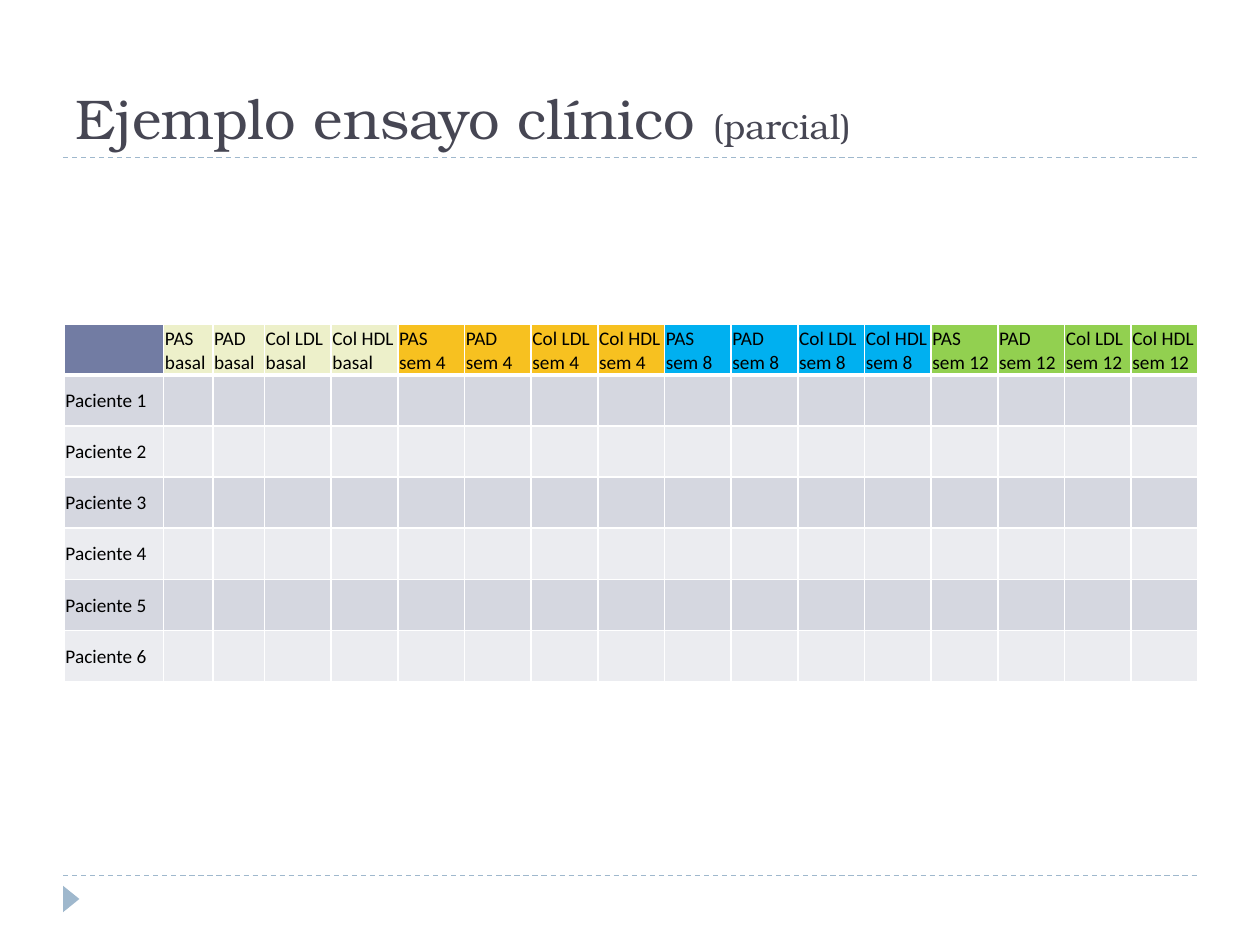
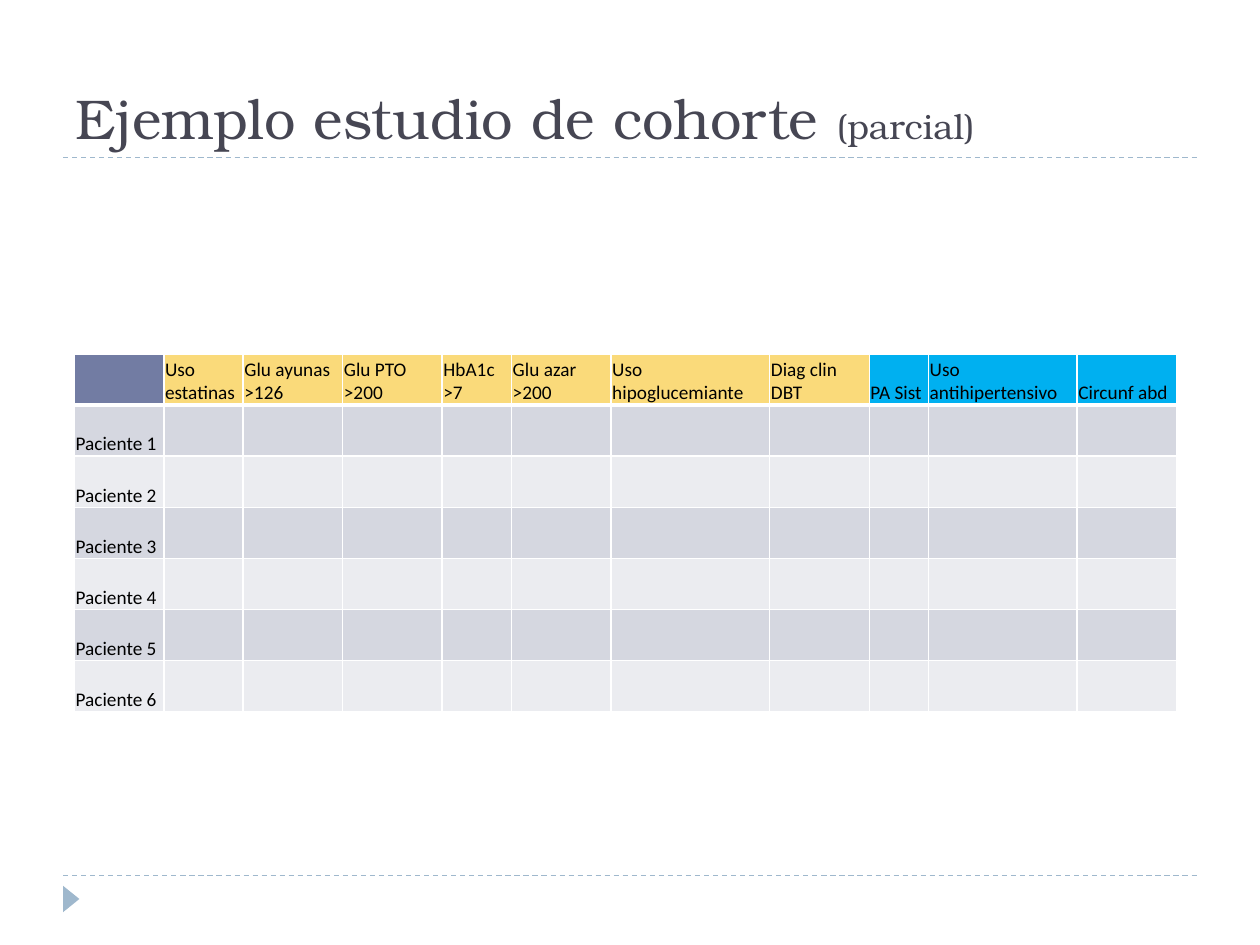
from lxml.etree import SubElement
from pptx import Presentation
from pptx.dml.color import RGBColor
from pptx.enum.dml import MSO_LINE
from pptx.enum.shapes import MSO_CONNECTOR, MSO_SHAPE
from pptx.enum.text import MSO_ANCHOR, MSO_AUTO_SIZE, PP_ALIGN
from pptx.oxml.ns import qn
from pptx.util import Inches, Pt

COLORS = {
    "title": "464653", "accent": "9FB8CD", "text": "000000", "edge": "FFFFFF",
    "corner": "727CA3", "odd": "D5D7E0", "even": "EBECF0", "lime": "EDF0CA",
    "gold": "F7C120", "sand": "FADA7A", "blue": "00B0F0", "green": "92D050",
}
SERIF, SANS = "TeX Gyre Bonum", "Calibri"

TESTS = ["PAS", "PAD", "Col LDL", "Col HDL"]
VISITS = [("basal", "lime"), ("sem 4", "gold"), ("sem 8", "blue"), ("sem 12", "green")]
PATIENTS = [f"Paciente {n}" for n in range(1, 7)]
FIRST = [0.79, 0.39, 0.41]
WIDTH, HEIGHT = 9, 2.84

SLIDES = [
    {
        "title": "Ejemplo ensayo clínico ",
        "left": 0.51, "top": 2.57, "anchor": MSO_ANCHOR.MIDDLE,
        "heads": [(f"{test} {visit}", color) for visit, color in VISITS for test in TESTS],
        "widths": FIRST + [(WIDTH - sum(FIRST)) / 14] * 14,
    },
    {
        "title": "Ejemplo estudio de cohorte ",
        "left": 0.59, "top": 2.81, "anchor": MSO_ANCHOR.BOTTOM,
        "heads": [
            ("Uso estatinas", "sand"), ("Glu ayunas >126", "sand"),
            ("Glu PTO >200", "sand"), ("HbA1c >7", "sand"),
            ("Glu azar >200", "sand"), ("Uso hipoglucemiante", "sand"),
            ("Diag clin DBT", "sand"), ("PA Sist", "blue"),
            ("Uso antihipertensivo", "blue"), ("Circunf abd", "blue"),
        ],
        "widths": [0.71, 0.63, 0.79, 0.79, 0.55, 0.79, 1.26, 0.79, 0.47, 1.18, 0.79],
    },
]


def rgb(name):
    return RGBColor.from_string(COLORS[name])


def style(run, size, face, color):
    run.font.size = Pt(size)
    run.font.name = face
    run.font.bold = False
    run.font.color.rgb = rgb(color)


def add_rule(slide, top):
    rule = slide.shapes.add_connector(
        MSO_CONNECTOR.STRAIGHT, Inches(0.5), Inches(top), Inches(9.5), Inches(top))
    rule.line.color.rgb = rgb("accent")
    rule.line.width = Pt(0.75)
    rule.line.dash_style = MSO_LINE.DASH
    SubElement(rule.element.spPr, qn("a:effectLst"))


def add_frame(slide):
    for top in (6.95, 1.25):
        add_rule(slide, top)
    mark = slide.shapes.add_shape(
        MSO_SHAPE.ISOSCELES_TRIANGLE, Inches(0.46), Inches(7.07), Inches(0.21), Inches(0.13))
    mark.rotation = 90
    mark.shadow.inherit = False
    mark.fill.solid()
    mark.fill.fore_color.rgb = rgb("accent")
    mark.line.fill.background()


def set_title(slide, text):
    title = slide.shapes.title
    title.left, title.top = Inches(0.5), Inches(0.17)
    title.width, title.height = Inches(9), Inches(1.08)
    frame = title.text_frame
    frame.auto_size = MSO_AUTO_SIZE.NONE
    frame.vertical_anchor = MSO_ANCHOR.BOTTOM
    line = frame.paragraphs[0]
    line.alignment = PP_ALIGN.LEFT
    for part, size in ((text, 32), ("(parcial)", 20)):
        run = line.add_run()
        run.text = part
        style(run, size, SERIF, "title")


def set_edges(cell, base):
    props = cell._tc.get_or_add_tcPr()
    for side, width in (("L", 1), ("R", 1), ("T", 1), ("B", base)):
        edge = SubElement(props, qn(f"a:ln{side}"), w=str(Pt(width)))
        fill = SubElement(edge, qn("a:solidFill"))
        SubElement(fill, qn("a:srgbClr"), val=COLORS["edge"])


def set_cell(cell, text, color, anchor, base):
    set_edges(cell, base)
    cell.fill.solid()
    cell.fill.fore_color.rgb = rgb(color)
    cell.vertical_anchor = anchor
    cell.margin_left = cell.margin_right = cell.margin_top = Inches(0.01)
    cell.margin_bottom = 0
    if text:
        cell.text_frame.text = text
        style(cell.text_frame.paragraphs[0].runs[0], 11, SANS, "text")


def add_grid(slide, data):
    heads, widths = [("", "corner")] + data["heads"], data["widths"]
    rows = len(PATIENTS) + 1
    grid = slide.shapes.add_table(
        rows, len(heads), Inches(data["left"]), Inches(data["top"]),
        Inches(sum(widths)), Inches(HEIGHT)).table
    for column, width in zip(grid.columns, widths):
        column.width = Inches(width)
    for row in grid.rows:
        row.height = Inches(HEIGHT / rows)
    for c, (text, color) in enumerate(heads):
        set_cell(grid.cell(0, c), text, color, MSO_ANCHOR.BOTTOM, 3)
        for r, name in enumerate(PATIENTS, 1):
            band = "odd" if r % 2 else "even"
            label = "" if c else name
            set_cell(grid.cell(r, c), label, band, data["anchor"], 1)
    for c in range(len(heads)):
        top = grid.cell(1, c)._tc.tcPr.find(qn("a:lnT"))
        top.set("w", str(Pt(3)))


def main():
    deck = Presentation()
    deck.slide_width, deck.slide_height = Inches(10), Inches(7.5)
    for data in SLIDES:
        slide = deck.slides.add_slide(deck.slide_layouts[5])
        add_frame(slide)
        set_title(slide, data["title"])
        add_grid(slide, data)
    deck.save("out.pptx")


if __name__ == "__main__":
    main()
